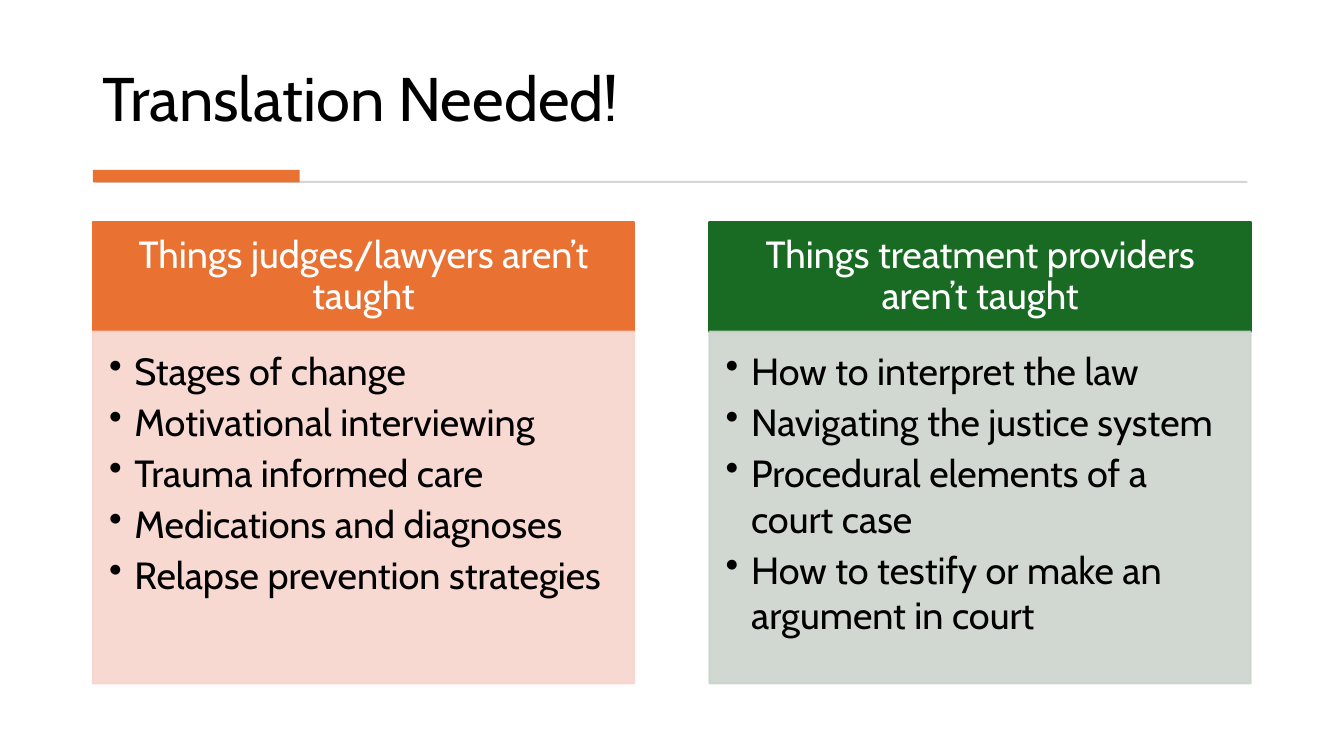
from dataclasses import dataclass

import pptx
import pptx.dml.color
import pptx.enum.shapes
import pptx.enum.text
import pptx.oxml
import pptx.oxml.ns
import pptx.util
from pptx.util import Cm

COLORS = {
    "orange": "E97132",
    "green": "196B24",
    "pink": "F7D5CE",
    "sage": "CCD4CD",
    "rule": "D5D5D5",
    "black": "000000",
    "white": "FFFFFF",
}
FONT = "Cabin"
ANCHOR = pptx.enum.text.MSO_ANCHOR
LEFT, COLUMN_WIDTH, COLUMN_STEP = 2.34, 13.64, 15.54
HEADER_TOP, HEADER_HEIGHT, BODY_HEIGHT = 5.59, 2.77, 8.86


@dataclass
class Column:
    heading: str
    items: list[str]
    header_color: str
    body_color: str


COLUMNS = [
    Column(
        "Things judges/lawyers aren’t taught",
        [
            "Stages of change",
            "Motivational interviewing",
            "Trauma informed care",
            "Medications and diagnoses",
            "Relapse prevention strategies",
        ],
        "orange",
        "pink",
    ),
    Column(
        "Things treatment providers aren’t taught",
        [
            "How to interpret the law",
            "Navigating the justice system",
            "Procedural elements of a court case",
            "How to testify or make an argument in court",
        ],
        "green",
        "sage",
    ),
]


def rgb(name: str) -> pptx.dml.color.RGBColor:
    return pptx.dml.color.RGBColor.from_string(COLORS[name])


def add_bar(page, left: float, top: float, width: float, height: float, color: str):
    bar = page.shapes.add_shape(
        pptx.enum.shapes.MSO_SHAPE.RECTANGLE, Cm(left), Cm(top), Cm(width), Cm(height)
    )
    bar.shadow.inherit = False
    bar.fill.solid()
    bar.fill.fore_color.rgb = rgb(color)
    bar.line.fill.background()
    return bar


def add_panel(page, left: float, top: float, height: float, color: str):
    panel = add_bar(page, left, top, COLUMN_WIDTH, height, color)
    panel.line.color.rgb = rgb(color)
    panel.line.width = pptx.util.Pt(1.5)
    return panel


def set_frame(box, anchor, margins: tuple[float, float, float, float]):
    frame = box.text_frame
    frame.word_wrap = True
    frame.vertical_anchor = anchor
    frame.margin_left, frame.margin_top, frame.margin_right, frame.margin_bottom = map(Cm, margins)
    return frame


def style(para, size: float, color: str) -> None:
    para.font.name = FONT
    para.font.size = pptx.util.Pt(size)
    para.font.color.rgb = rgb(color)


def set_opacity(panel, percent: int) -> None:
    for color in panel._element.spPr.iter(pptx.oxml.ns.qn("a:srgbClr")):
        alpha = pptx.oxml.parse_xml(f'<a:alpha {pptx.oxml.ns.nsdecls("a")} val="{percent * 1000}"/>')
        color.append(alpha)


def add_bullet(para) -> None:
    properties = para._p.get_or_add_pPr()
    properties.set("marL", str(Cm(0.64)))
    properties.set("indent", str(-Cm(0.64)))
    properties.append(pptx.oxml.parse_xml(f'<a:buChar {pptx.oxml.ns.nsdecls("a")} char="•"/>'))


def add_column(page, column: Column, left: float) -> None:
    # Heading panel
    header = add_panel(page, left, HEADER_TOP, HEADER_HEIGHT, column.header_color)
    para = set_frame(header, ANCHOR.MIDDLE, (0.53, 0.3, 0.53, 0.3)).paragraphs[0]
    para.text = column.heading
    para.alignment = pptx.enum.text.PP_ALIGN.CENTER
    para.line_spacing = 0.9
    style(para, 27, "white")

    # Bullet panel
    body = add_panel(page, left, HEADER_TOP + HEADER_HEIGHT, BODY_HEIGHT, column.body_color)
    set_opacity(body, 90)
    frame = set_frame(body, ANCHOR.TOP, (0.41, 0.41, 0.53, 0.61))
    for index, item in enumerate(column.items):
        para = frame.add_paragraph() if index else frame.paragraphs[0]
        para.text = item
        para.level = 1
        para.alignment = pptx.enum.text.PP_ALIGN.LEFT
        add_bullet(para)
        para.space_after = pptx.util.Pt(4)
        style(para, 27, "black")


def main() -> None:
    deck = pptx.Presentation()
    deck.slide_width, deck.slide_height = Cm(33.87), Cm(19.05)
    page = deck.slides.add_slide(deck.slide_layouts[6])

    # Title
    title = page.shapes.add_textbox(Cm(LEFT), Cm(0.71), Cm(29.18), Cm(2.82))
    para = set_frame(title, ANCHOR.BOTTOM, (0.25, 0.13, 0.25, 0.13)).paragraphs[0]
    para.text = "Translation Needed!"
    para.line_spacing = 0.9
    style(para, 44, "black")

    # Rule with accent
    add_bar(page, 2.41, 4.56, 29.03, 0.05, "rule")
    add_bar(page, LEFT, 4.28, 5.21, 0.32, "orange")

    # Columns
    for index, column in enumerate(COLUMNS):
        add_column(page, column, LEFT + index * COLUMN_STEP)

    deck.save("out.pptx")


if __name__ == "__main__":
    main()
